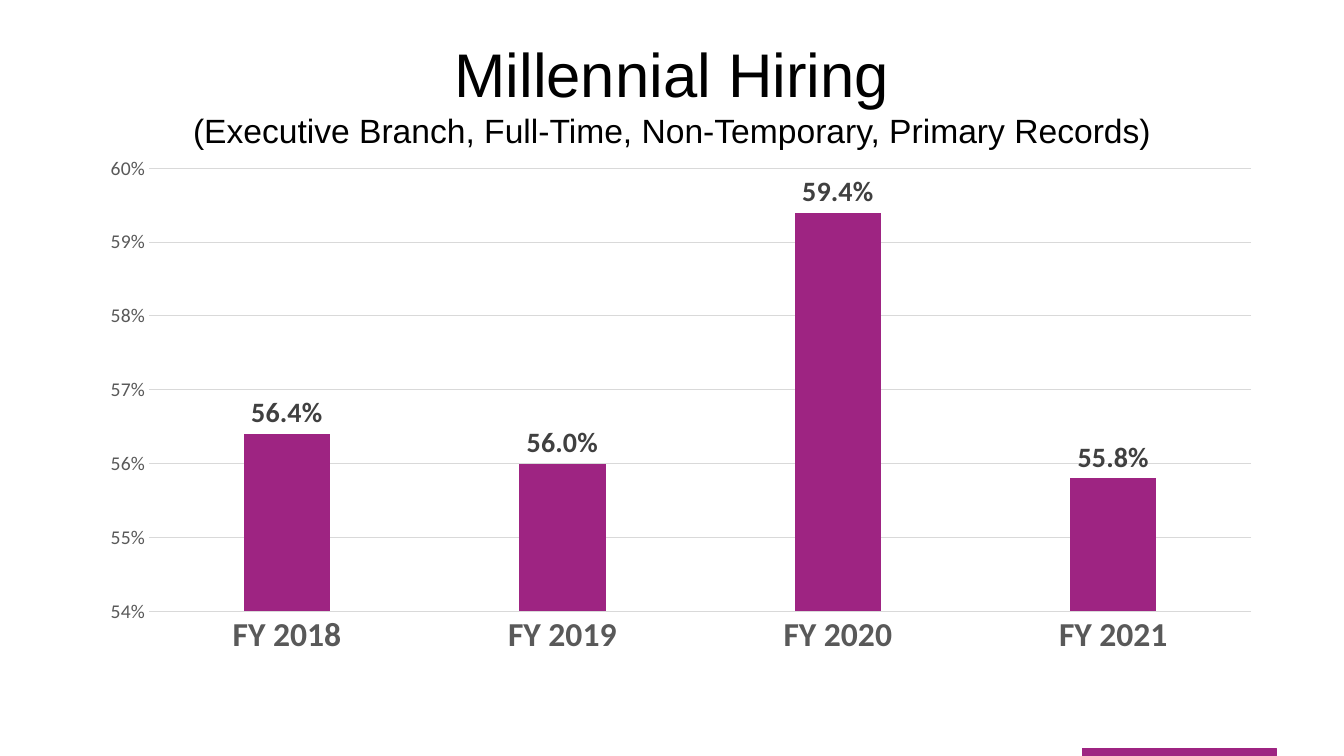
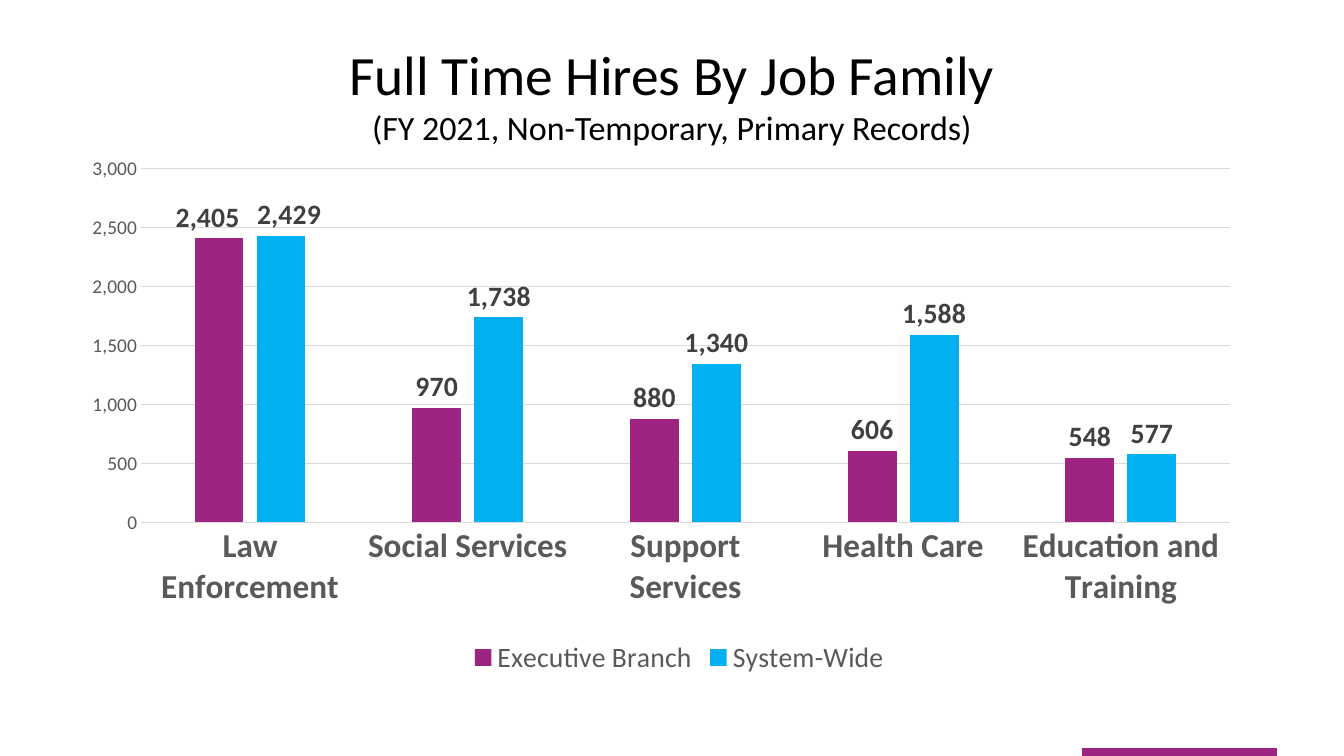
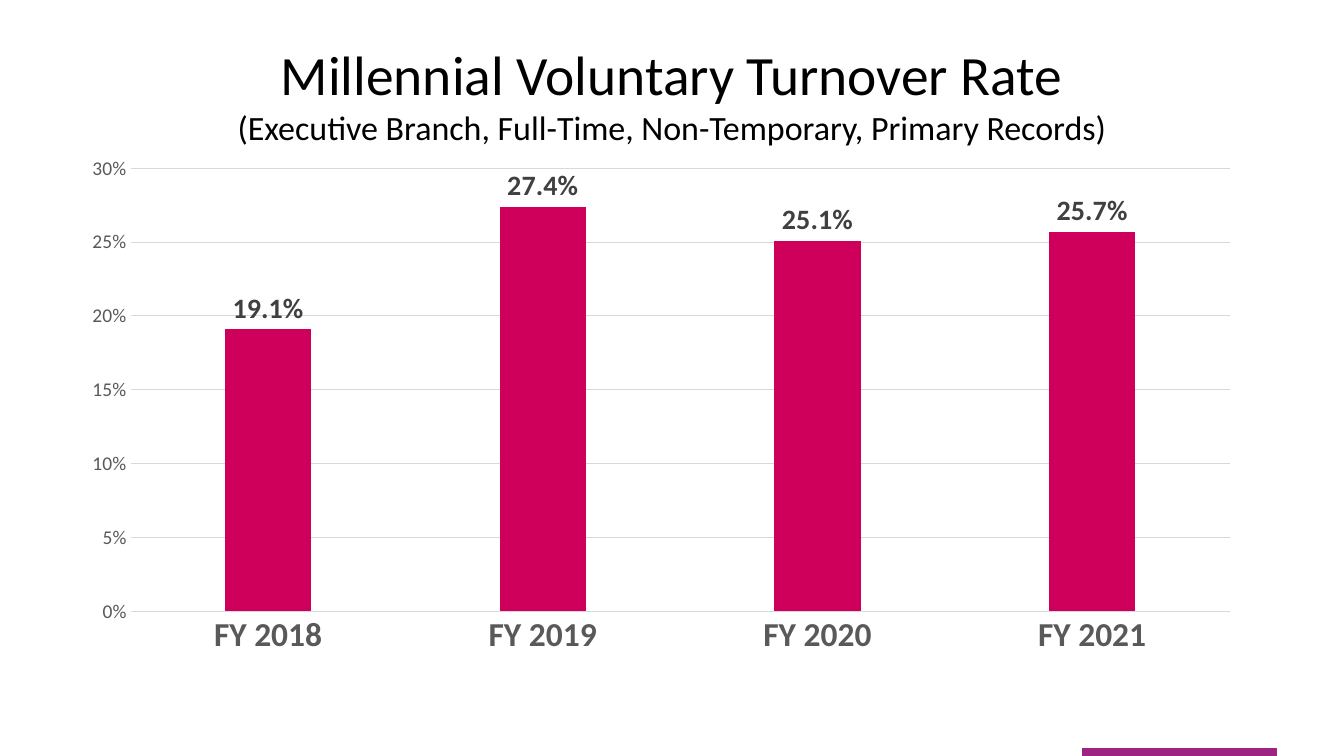
from lxml.etree import SubElement
from pptx import Presentation
from pptx.chart.data import CategoryChartData
from pptx.dml.color import RGBColor
from pptx.enum.chart import XL_CHART_TYPE, XL_LABEL_POSITION, XL_LEGEND_POSITION, XL_TICK_MARK
from pptx.enum.shapes import MSO_SHAPE
from pptx.enum.text import MSO_ANCHOR, MSO_AUTO_SIZE, PP_ALIGN
from pptx.oxml.ns import qn
from pptx.util import Pt

PURPLE = RGBColor(0x9E, 0x24, 0x82)
BLUE = RGBColor(0x00, 0xB0, 0xF0)
CRIMSON = RGBColor(0xCF, 0x00, 0x5C)
BLACK = RGBColor(0, 0, 0)
LABEL_GRAY = RGBColor(0x40, 0x40, 0x40)
AXIS_GRAY = RGBColor(0x59, 0x59, 0x59)
GRID_GRAY = RGBColor(0xD9, 0xD9, 0xD9)

YEARS = ["FY 2018", "FY 2019", "FY 2020", "FY 2021"]
JOB_FAMILIES = ["Law Enforcement", "Social Services", "Support Services",
                "Health Care", "Education and Training"]
EXECUTIVE = "(Executive Branch, Full-Time, Non-Temporary, Primary Records)"

# Plot boxes are fractions of the chart: left, top, width, height.
# "nudges" shift the first label of each series sideways.
SLIDES = [
    dict(title="Millennial Hiring", subtitle=EXECUTIVE,
         font="Arial", sizes=(44, 24), categories=YEARS,
         series=[("Series 1", [0.564, 0.56, 0.594, 0.558], PURPLE)],
         scale=(0.54, 0.6, 0.01), axis_format="0%", label_format="0.0%",
         plot=(0.059, 0.02, 0.951, 0.848), nudges=[]),
    dict(title="Full Time Hires By Job Family",
         subtitle="(FY 2021, Non-Temporary, Primary Records)",
         font="Calibri", sizes=(39.6, 24.3), categories=JOB_FAMILIES,
         series=[("Executive Branch", [2405, 970, 880, 606, 548], PURPLE),
                 ("System-Wide", [2429, 1738, 1340, 1588, 577], BLUE)],
         scale=(0, 3000, 500), axis_format="#,##0", label_format="#,##0",
         plot=(0.03, 0.02, 0.951, 0.678), nudges=[-0.01, 0.007]),
    dict(title="Millennial Voluntary Turnover Rate", subtitle=EXECUTIVE,
         font="Calibri", sizes=(39.6, 24.3), categories=YEARS,
         series=[("Series 1", [0.191, 0.274, 0.251, 0.257], CRIMSON)],
         scale=(0, 0.3, 0.05), axis_format="0%", label_format="0.0%",
         plot=(0.03, 0.02, 0.951, 0.848), nudges=[]),
]


def set_font(font, size, color, bold=False, name="Calibri"):
    font.name = name
    font.size = Pt(size)
    font.bold = bold
    font.color.rgb = color


def add_layout(parent, position, **settings):
    """Insert a manual chart layout as the given child of parent."""
    for old in parent.findall(qn("c:layout")):
        parent.remove(old)
    layout = SubElement(parent, qn("c:layout"))
    manual = SubElement(layout, qn("c:manualLayout"))
    for tag, value in settings.items():
        SubElement(manual, qn(f"c:{tag}")).set("val", str(value))
    parent.insert(position, layout)


deck = Presentation()
deck.slide_width, deck.slide_height = Pt(960), Pt(540)
title_only = deck.slide_layouts[5]

for number, content in enumerate(SLIDES):
    page = deck.slides.add_slide(title_only)

    # The accent band is drawn once and moved to the master.
    if number == 0:
        band = page.shapes.add_shape(MSO_SHAPE.RECTANGLE, Pt(773), Pt(535), Pt(139), Pt(5))
        band.shadow.inherit = False
        band.fill.solid()
        band.fill.fore_color.rgb = PURPLE
        band.line.color.rgb = PURPLE
        band.line.width = Pt(0.75)
        band.element.xpath(".//p:cNvPr")[0].set("id", "20")
        deck.slide_master.shapes.element.append(band.element)

    title = page.shapes.title
    title.left, title.top, title.width, title.height = Pt(48), Pt(21.6), Pt(864), Pt(90)
    frame = title.text_frame
    frame.word_wrap = True
    frame.auto_size = MSO_AUTO_SIZE.NONE
    frame.vertical_anchor = MSO_ANCHOR.MIDDLE
    para = frame.paragraphs[0]
    para.text = f"{content['title']}\v{content['subtitle']}"
    para.alignment = PP_ALIGN.CENTER
    for span, size in zip(para.runs, content["sizes"]):
        set_font(span.font, size, BLACK, name=content["font"])

    data = CategoryChartData()
    data.categories = content["categories"]
    for name, values, color in content["series"]:
        data.add_series(name, values)
    chart = page.shapes.add_chart(XL_CHART_TYPE.COLUMN_CLUSTERED, Pt(66), Pt(111.6),
                                  Pt(828), Pt(374.4), data).chart
    set_font(chart.font, 10, BLACK)
    chart.has_title = False
    chart.has_legend = len(content["series"]) > 1
    if chart.has_legend:
        chart.legend.position = XL_LEGEND_POSITION.BOTTOM
        chart.legend.include_in_layout = False
        set_font(chart.legend.font, 20, AXIS_GRAY)

    category_axis = chart.category_axis
    set_font(category_axis.tick_labels.font, 24, AXIS_GRAY, bold=True)
    category_axis.format.line.color.rgb = GRID_GRAY
    category_axis.format.line.width = Pt(0.75)

    value_axis = chart.value_axis
    value_axis.minimum_scale, value_axis.maximum_scale, value_axis.major_unit = content["scale"]
    set_font(value_axis.tick_labels.font, 14, AXIS_GRAY)
    value_axis.tick_labels.number_format = content["axis_format"]
    value_axis.tick_labels.number_format_is_linked = False
    value_axis.format.line.fill.background()
    value_axis.has_major_gridlines = True
    grid = value_axis.major_gridlines.format.line
    grid.color.rgb = GRID_GRAY
    grid.width = Pt(0.75)
    for axis in (category_axis, value_axis):
        axis.major_tick_mark = axis.minor_tick_mark = XL_TICK_MARK.NONE

    plot = chart.plots[0]
    plot.gap_width, plot.overlap = 219, -27
    plot.vary_by_categories = False
    for series, (name, values, color) in zip(plot.series, content["series"]):
        series.format.fill.solid()
        series.format.fill.fore_color.rgb = color
        labels = series.data_labels
        labels.show_value = True
        labels.position = XL_LABEL_POSITION.OUTSIDE_END
        labels.number_format = content["label_format"]
        labels.number_format_is_linked = False
        set_font(labels.font, 20, LABEL_GRAY, bold=True)
        if content["nudges"]:
            first_label = series.points[0].data_label
            set_font(first_label.font, 20, LABEL_GRAY, bold=True)
            first_label.position = XL_LABEL_POSITION.OUTSIDE_END

    for label, shift in zip(chart.element.xpath(".//c:dLbl"), content["nudges"]):
        add_layout(label, 1, x=shift, y=0)
        number_format = SubElement(label, qn("c:numFmt"))
        number_format.set("formatCode", content["label_format"])
        number_format.set("sourceLinked", "0")
        label.insert(2, number_format)

    left, top, width, height = content["plot"]
    add_layout(chart.element.xpath(".//c:plotArea")[0], 0, layoutTarget="inner",
               xMode="edge", yMode="edge", x=left, y=top, w=width, h=height)

deck.save("out.pptx")
